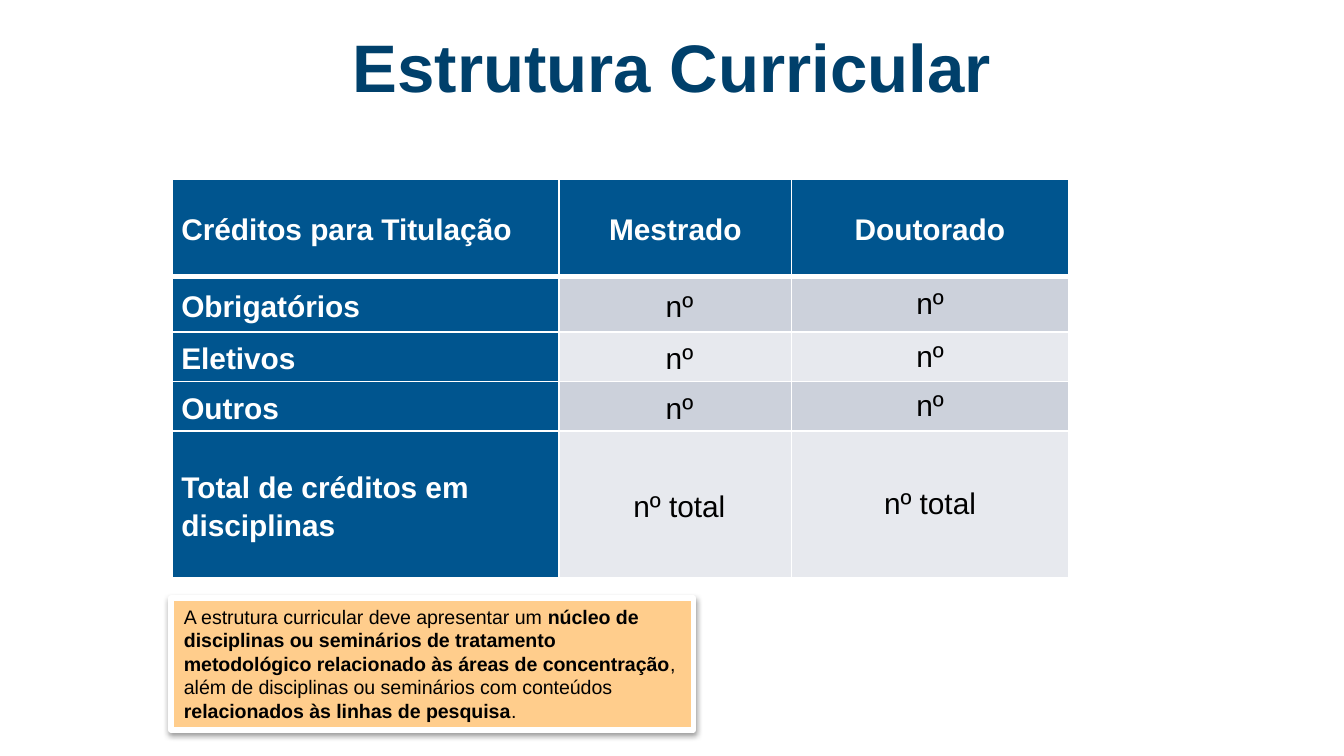
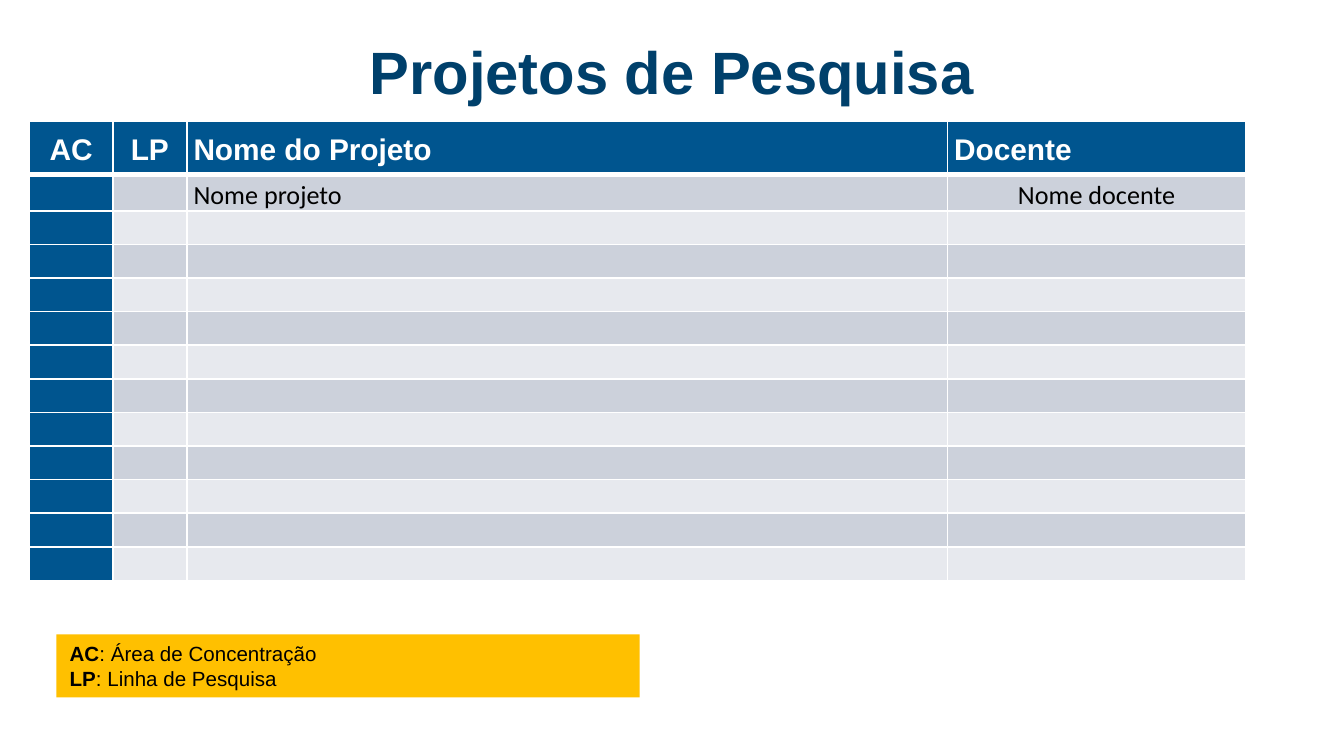
import pptx
import pptx.util
import pptx.dml.color
import pptx.enum.shapes
import pptx.enum.text
import pptx.oxml
import pptx.oxml.ns
from dataclasses import dataclass

Inch, Pt = pptx.util.Inches, pptx.util.Pt
Align, Anchor = pptx.enum.text.PP_ALIGN, pptx.enum.text.MSO_ANCHOR
LEFT, MID = Align.LEFT, Align.CENTER


@dataclass(frozen=True)
class Theme:
    font: str = "Arial"
    title: str = "00406B"
    head: str = "00558F"
    bands: tuple = ("CCD1DB", "E7E9EE")
    white: str = "FFFFFF"
    ink: str = "000000"
    cell: float = 16
    thin: float = 1
    thick: float = 3
    lead: float = 1.15


THEME = Theme()
WIDE = 10
HIGH = WIDE * 9 / 16

# Content: ** marks bold text in notes
CREDITS = {
    "title": ("Estrutura Curricular", 36),
    "at": (1.28, 1.33),
    "cols": [2.88, 1.73, 2.06],
    "rows": [0.73, 0.41, 0.37, 0.37, 1.09],
    "cells": [
        ["Créditos para Titulação", "Mestrado", "Doutorado"],
        ["Obrigatórios", " nº", "nº"],
        ["Eletivos", " nº", "nº"],
        ["Outros", " nº", "nº"],
        ["Total de créditos em disciplinas", " nº total", "nº total"],
    ],
    "heads": [LEFT, MID, MID],
    "body": [LEFT, MID, MID],
    "tight": [2],
    "pad": 0.07,
    "type": ("Arial", 16),
    "note": {
        "box": (1.27, 4.45, 3.89, 0.98),
        "fill": "FFCD8C",
        "size": 10.5,
        "framed": True,
        "text": [
            "A estrutura curricular deve apresentar um **núcleo de disciplinas "
            "ou seminários de tratamento metodológico relacionado às áreas de "
            "concentração**, além de disciplinas ou seminários com conteúdos "
            "**relacionados às linhas de pesquisa**.",
        ],
    },
}

PROJECTS = {
    "title": ("Projetos de Pesquisa", 32),
    "at": (0.22, 0.9),
    "cols": [0.62, 0.55, 5.66, 2.22],
    "rows": [0.4] + [0.25] * 12,
    "cells": [
        ["AC", "LP", "Nome do Projeto", "Docente"],
        ["", "", "Nome projeto", "Nome docente"],
    ] + [[""] * 4] * 11,
    "heads": [MID, MID, LEFT, LEFT],
    "body": [LEFT, LEFT, LEFT, MID],
    "tight": [],
    "pad": 0.05,
    "type": ("Calibri", 14),
    "note": {
        "box": (0.42, 4.72, 4.34, 0.47),
        "fill": "FFC000",
        "size": 11,
        "framed": False,
        "text": ["**AC**: Área de Concentração", "**LP**: Linha de Pesquisa"],
    },
}


def rgb(code):
    return pptx.dml.color.RGBColor.from_string(code)


def paint(fill, code):
    fill.solid()
    fill.fore_color.rgb = rgb(code)


def style(run, size, color, bold=False, face=THEME.font):
    run.font.name, run.font.size, run.font.bold = face, Pt(size), bold
    run.font.color.rgb = rgb(color)


def xml(text):
    return pptx.oxml.parse_xml(text.replace(
        ">", " " + pptx.oxml.ns.nsdecls("a") + ">", 1))


# Title, centred with equal side margins
def add_title(slide, text, size):
    side = 0.29
    box = slide.shapes.add_textbox(
        Inch(side), Inch(0.31), Inch(WIDE - 2 * side), Inch(0.58))
    frame = box.text_frame
    frame.word_wrap, frame.vertical_anchor = True, Anchor.BOTTOM
    frame.margin_left = frame.margin_right = Inch(0.1)
    frame.margin_top = frame.margin_bottom = Inch(0.1)
    frame.text = text
    para = frame.paragraphs[0]
    para.alignment = MID
    style(para.runs[0], size, THEME.title, True)


# White cell borders, thick between the head and the body
def add_lines(cell, row):
    widths = {"L": THEME.thin, "R": THEME.thin,
              "T": THEME.thick if row == 1 else THEME.thin,
              "B": THEME.thick if row == 0 else THEME.thin}
    props = cell._tc.get_or_add_tcPr()
    for spot, (side, width) in enumerate(widths.items()):
        props.insert(spot, xml(
            f'<a:ln{side} w="{int(Pt(width))}"><a:solidFill>'
            f'<a:srgbClr val="{THEME.white}"/></a:solidFill></a:ln{side}>'))


def fill_cell(cell, text, row, col, page):
    key = row == 0 or col == 0
    paint(cell.fill, THEME.head if key else THEME.bands[(row - 1) % 2])
    add_lines(cell, row)
    cell.vertical_anchor = Anchor.MIDDLE
    cell.margin_left = cell.margin_right = Inch(page["pad"])
    cell.margin_top = cell.margin_bottom = 0
    para = cell.text_frame.paragraphs[0]
    if not text:
        para._p.append(xml('<a:endParaRPr sz="800"></a:endParaRPr>'))
        return
    para.text = text
    para.alignment = page["body" if row else "heads"][col]
    if row == 0 or col not in page["tight"]:
        para.line_spacing = THEME.lead
    if key:
        style(para.runs[0], THEME.cell, THEME.white, True)
    else:
        face, size = page["type"]
        style(para.runs[0], size, THEME.ink, face=face)


def add_grid(slide, page):
    cols, rows = page["cols"], page["rows"]
    left, top = page["at"]
    grid = slide.shapes.add_table(
        len(rows), len(cols), Inch(left), Inch(top),
        Inch(sum(cols)), Inch(sum(rows))).table
    for col, width in zip(grid.columns, cols):
        col.width = Inch(width)
    for row, height in zip(grid.rows, rows):
        row.height = Inch(height)
    for r, line in enumerate(page["cells"]):
        for c, text in enumerate(line):
            fill_cell(grid.cell(r, c), text, r, c, page)


# Coloured note, optionally with a white frame and a soft shadow
def add_note(slide, note):
    shape = slide.shapes.add_shape(
        pptx.enum.shapes.MSO_SHAPE.RECTANGLE, *map(Inch, note["box"]))
    shape.shadow.inherit = False
    paint(shape.fill, note["fill"])
    if note["framed"]:
        paint(shape.line.fill, THEME.white)
        shape.line.width = Pt(THEME.thick)
        glow = shape._element.spPr.find(pptx.oxml.ns.qn("a:effectLst"))
        glow.append(xml(
            f'<a:outerShdw blurRad="{int(Pt(3.1))}" dist="{int(Pt(1.6))}" '
            f'dir="5400000" rotWithShape="0"><a:srgbClr val="{THEME.ink}">'
            '<a:alpha val="38000"/></a:srgbClr></a:outerShdw>'))
    else:
        shape.line.fill.background()
    frame = shape.text_frame
    frame.word_wrap, frame.vertical_anchor = True, Anchor.TOP
    frame.auto_size = pptx.enum.text.MSO_AUTO_SIZE.SHAPE_TO_FIT_TEXT
    for n, line in enumerate(note["text"]):
        para = frame.add_paragraph() if n else frame.paragraphs[0]
        para.alignment = LEFT
        for k, part in enumerate(line.split("**")):
            if part:
                run = para.add_run()
                run.text = part
                style(run, note["size"], THEME.ink, k % 2 == 1)


def main():
    deck = pptx.Presentation()
    deck.slide_width, deck.slide_height = Inch(WIDE), Inch(HIGH)
    for page in (CREDITS, PROJECTS):
        slide = deck.slides.add_slide(deck.slide_layouts[6])
        add_title(slide, *page["title"])
        add_grid(slide, page)
        add_note(slide, page["note"])
    deck.save("out.pptx")


if __name__ == "__main__":
    main()
